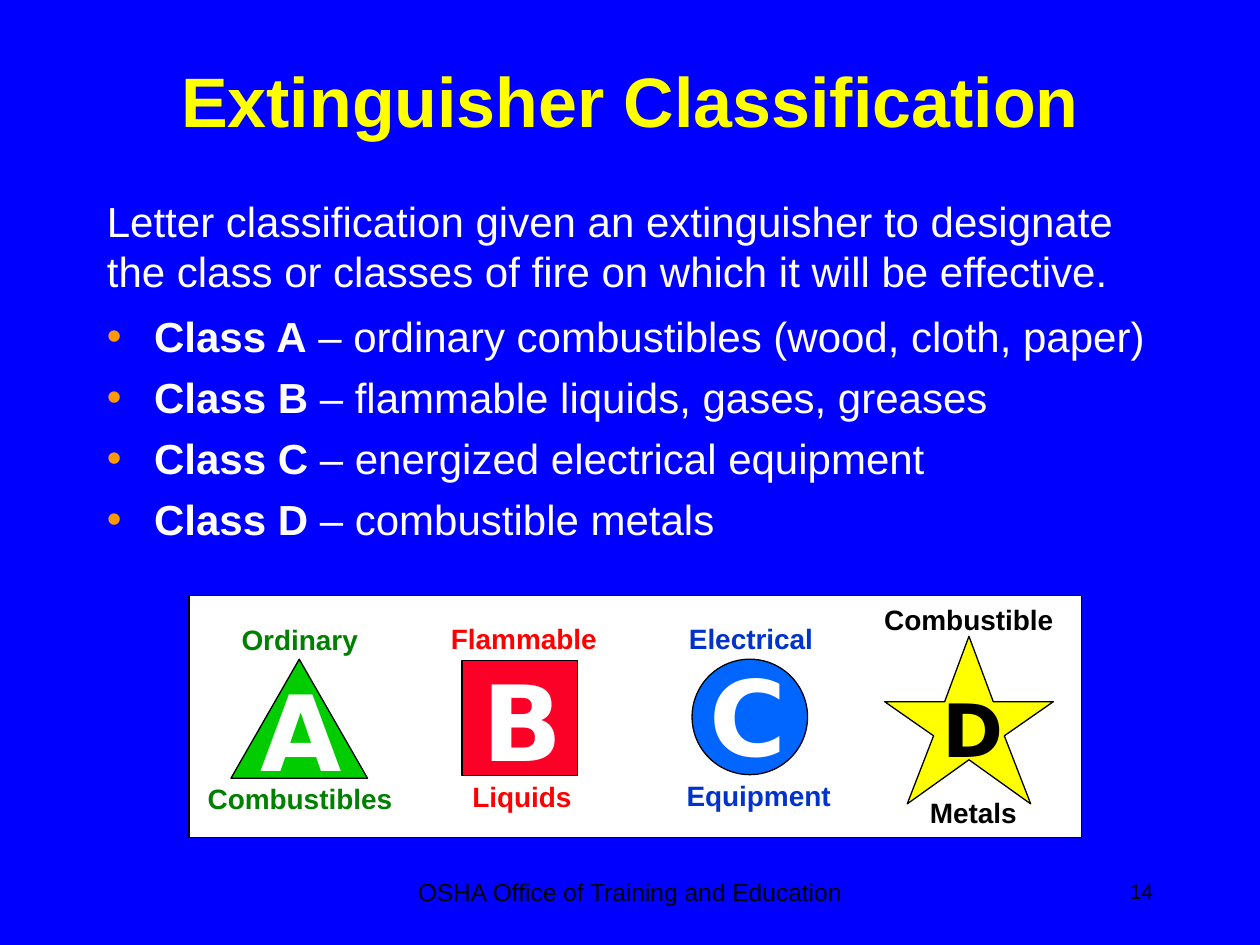
from lxml import etree
from pptx import Presentation
from pptx.dml.color import RGBColor
from pptx.enum import shapes, text
from pptx.oxml import ns
from pptx.util import Pt

COLORS = {
    "blue": "0000FF", "yellow": "FFFF00", "white": "FFFFFF", "black": "000000",
    "orange": "FF9900", "green": "00CC00", "red": "FC0128", "sky": "0066FF",
    "green text": "008000", "red text": "FF0000", "blue text": "0033CC",
}
LEFT, CENTER, RIGHT = text.PP_ALIGN.LEFT, text.PP_ALIGN.CENTER, text.PP_ALIGN.RIGHT


def add_text(words, left, top, width, height, size, color, bold=False,
             align=LEFT, wrap=False, font="Arial", anchor=text.MSO_ANCHOR.TOP):
    box = page.shapes.add_textbox(Pt(left), Pt(top), Pt(width), Pt(height))
    frame = box.text_frame
    frame.text = words
    frame.word_wrap = wrap
    frame.vertical_anchor = anchor
    para = frame.paragraphs[0]
    para.alignment = align
    para.font.name, para.font.size, para.font.bold = font, Pt(size), bold
    para.font.color.rgb = RGBColor.from_string(COLORS[color])
    return box


def paint(shape, color):
    shape.shadow.inherit = False
    shape.fill.solid()
    shape.fill.fore_color.rgb = RGBColor.from_string(COLORS[color])
    shape.line.color.rgb = RGBColor.from_string(COLORS["black"])
    shape.line.width = Pt(0.75)


deck = Presentation()
deck.slide_width, deck.slide_height = Pt(720), Pt(540)
page = deck.slides.add_slide(deck.slide_layouts[5])
page.background.fill.solid()
page.background.fill.fore_color.rgb = RGBColor.from_string(COLORS["blue"])

# Title
title = page.shapes.title
title.left, title.top, title.width, title.height = Pt(54), Pt(12), Pt(612), Pt(90)
title.text_frame.text = "Extinguisher Classification"
title.text_frame.vertical_anchor = text.MSO_ANCHOR.MIDDLE
para = title.text_frame.paragraphs[0]
para.alignment = CENTER
span = para.runs[0]
span.font.name, span.font.size, span.font.bold = "Arial", Pt(40), True
span.font.color.rgb = RGBColor.from_string(COLORS["yellow"])

# Introduction
add_text("Letter classification given an extinguisher to designate the class or "
         "classes of fire on which it will be effective.",
         54, 108, 594, 65, 24, "white", wrap=True)

# Bulleted classes
classes = [
    ("Class A", " – ordinary combustibles (wood, cloth, paper)"),
    ("Class B", " – flammable liquids, gases, greases"),
    ("Class C", " – energized electrical equipment"),
    ("Class D", " – combustible metals"),
]
box = page.shapes.add_textbox(Pt(54), Pt(174), Pt(612), Pt(234))
frame = box.text_frame
frame.word_wrap = True
for index, parts in enumerate(classes):
    para = frame.add_paragraph() if index else frame.paragraphs[0]
    para.space_before = Pt(6)
    for words, bold in zip(parts, (True, False)):
        span = para.add_run()
        span.text = words
        span.font.name, span.font.size, span.font.bold = "Arial", Pt(24), bold
        span.font.color.rgb = RGBColor.from_string(COLORS["white"])
    props = para._p.get_or_add_pPr()
    props.set("marL", str(Pt(27)))
    props.set("indent", str(-Pt(27)))
    bullet_color = etree.SubElement(props, ns.qn("a:buClr"))
    etree.SubElement(bullet_color, ns.qn("a:srgbClr"), val=COLORS["orange"])
    etree.SubElement(props, ns.qn("a:buFont"), typeface="Arial")
    etree.SubElement(props, ns.qn("a:buChar"), char="•")

# White panel and class symbols
symbols = [
    (shapes.MSO_SHAPE.RECTANGLE, 108, 340.5, 510, 138, "white"),
    (shapes.MSO_SHAPE.ISOSCELES_TRIANGLE, 132, 376.7, 78, 68, "green"),
    (shapes.MSO_SHAPE.RECTANGLE, 264, 377.3, 66, 66, "red"),
    (shapes.MSO_SHAPE.OVAL, 395.5, 376.7, 66, 66, "sky"),
]
for kind, left, top, width, height, color in symbols:
    paint(page.shapes.add_shape(kind, Pt(left), Pt(top), Pt(width), Pt(height)), color)

# Star: right half from top to bottom, then mirrored
middle = 553.7
half = [(0, 363.6), (13.9, 401), (48.2, 401), (20.2, 420.5), (35.3, 459.4), (0, 434.2)]
points = [(middle + x, y) for x, y in half]
points += [(middle - x, y) for x, y in half[-2:0:-1]]
builder = page.shapes.build_freeform(Pt(points[0][0]), Pt(points[0][1]))
builder.add_line_segments([(Pt(x), Pt(y)) for x, y in points[1:]], close=True)
paint(builder.convert_to_shape(), "yellow")

# Letters on the symbols
letters = [
    ("A", 141.8, 377.3, 48, 79, 60, "white"),
    ("B", 268.6, 371.5, 54, 79, 60, "white"),
    ("C", 398.2, 368.6, 57.6, 79, 60, "white"),
    ("D", 531.4, 387.4, 49.7, 57.6, 42, "black"),
]
for letter, left, top, width, height, size, color in letters:
    add_text(letter, left, top, width, height, size, color, bold=True,
             wrap=True, font="DejaVu Sans")

# Captions above and below the symbols
captions = [
    ("Ordinary", 131, 352.3, 81.4, "green text"),
    ("Combustibles", 111.6, 443.3, 120.2, "green text"),
    ("Flammable", 250.6, 351.5, 97.9, "red text"),
    ("Liquids", 262.8, 442, 71.3, "red text"),
    ("Electrical", 386.6, 351.5, 85.7, "blue text"),
    ("Equipment", 385.2, 441.4, 97.2, "blue text"),
    ("Combustible", 498.2, 340.5, 111.6, "black"),
    ("Metals", 524.2, 451.2, 64.1, "black"),
]
for words, left, top, width, color in captions:
    add_text(words, left, top, width, 26.6, 16, color, bold=True)

# Footer and page number
add_text("OSHA Office of Training and Education", 180, 491, 360, 36.7, 14, "black",
         align=CENTER, wrap=True, anchor=text.MSO_ANCHOR.MIDDLE)
add_text("14", 518.4, 491, 147.6, 36.7, 12, "black",
         align=RIGHT, wrap=True, anchor=text.MSO_ANCHOR.MIDDLE)

deck.save("out.pptx")
